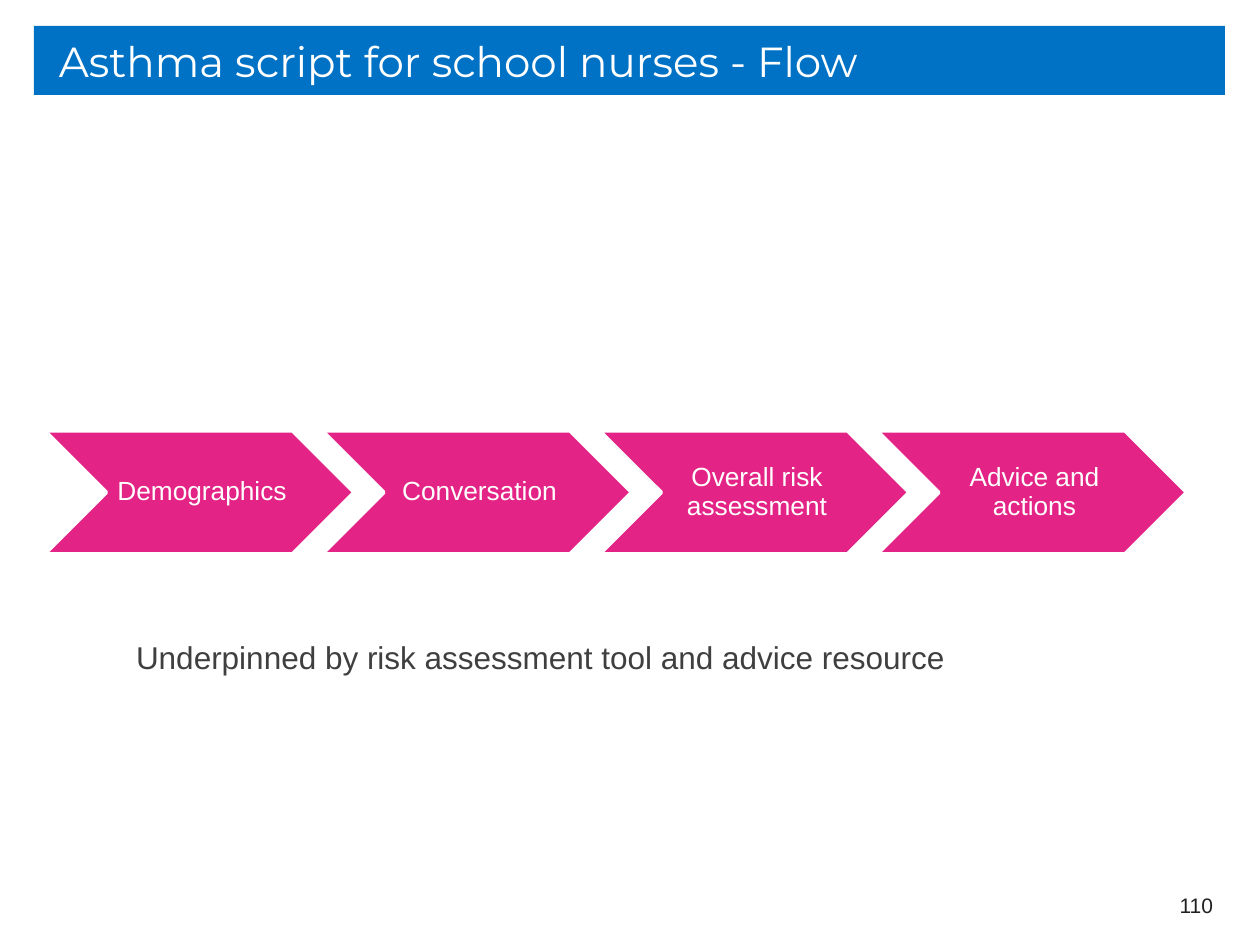
from pptx import Presentation
from pptx.dml.color import RGBColor
from pptx.enum.shapes import MSO_SHAPE
from pptx.enum.text import MSO_ANCHOR, PP_ALIGN
from pptx.util import Pt

PX = 914400 // 126
COLORS = {
    "banner": "0072C6",
    "step": "E32486",
    "white": "FFFFFF",
    "body": "3F3F3F",
    "number": "202020",
}


def color(name):
    return RGBColor.from_string(COLORS[name])


def write(shape, text, size, ink, font="Arial", align=PP_ALIGN.LEFT,
          spacing=1.0, margins=(12, 6, 12, 6)):
    """Fill a shape with one paragraph; margins are left, top, right, bottom in px."""
    left, top, right, bottom = (margin * PX for margin in margins)
    frame_format = {
        "word_wrap": True,
        "vertical_anchor": MSO_ANCHOR.MIDDLE,
        "margin_left": left,
        "margin_top": top,
        "margin_right": right,
        "margin_bottom": bottom,
    }
    for attribute, value in frame_format.items():
        setattr(shape.text_frame, attribute, value)
    paragraph = shape.text_frame.paragraphs[0]
    paragraph.text = text
    for attribute, value in {"alignment": align, "line_spacing": spacing}.items():
        setattr(paragraph, attribute, value)
    for attribute, value in {"name": font, "size": Pt(size)}.items():
        setattr(paragraph.font, attribute, value)
    paragraph.font.color.rgb = color(ink)


deck = Presentation()
deck.slide_width, deck.slide_height = 1260 * PX, 945 * PX
slide = deck.slides.add_slide(deck.slide_layouts[6])

# Title banner
banner = slide.shapes.add_shape(
    MSO_SHAPE.RECTANGLE, 34 * PX, 26 * PX, 1191 * PX, 69 * PX)
banner.shadow.inherit = False
banner.fill.solid()
banner.fill.fore_color.rgb = color("banner")
banner.line.fill.background()
write(banner, "Asthma script for school nurses - Flow", 24, "white",
      font="Montserrat", margins=(25, 6, 12, 6))

# Flow of steps
STEPS = ["Demographics", "Conversation", "Overall risk assessment", "Advice and actions"]
FLOW_LEFT, STEP_PITCH = 45, 277.5
for index, label in enumerate(STEPS):
    step = slide.shapes.add_shape(
        MSO_SHAPE.CHEVRON, int((FLOW_LEFT + index * STEP_PITCH) * PX), 431 * PX,
        309 * PX, 123 * PX)
    step.shadow.inherit = False
    step.fill.solid()
    step.fill.fore_color.rgb = color("step")
    step.line.color.rgb = color("white")
    step.line.width = Pt(2)
    write(step, label, 15, "white", align=PP_ALIGN.CENTER, spacing=0.9,
          margins=(8, 3, 3, 3))

# Supporting statement and page number
statement = slide.shapes.add_textbox(124 * PX, 631 * PX, 953 * PX, 51 * PX)
write(statement, "Underpinned by risk assessment tool and advice resource", 18, "body")

page_number = slide.shapes.add_textbox(931 * PX, 880 * PX, 294 * PX, 50 * PX)
write(page_number, "110", 12, "number", align=PP_ALIGN.RIGHT)

deck.save("out.pptx")
